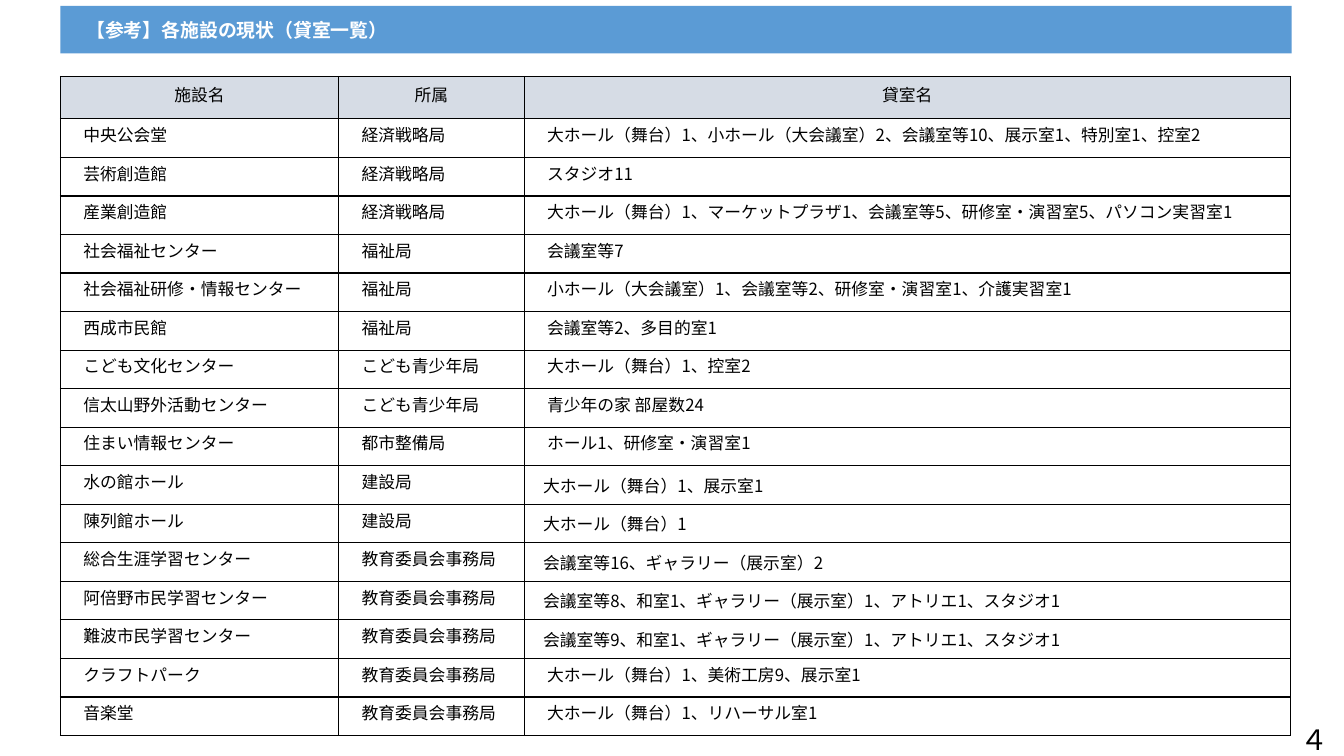
"""Build the slide that lists the rental rooms of each facility."""
from dataclasses import dataclass

from lxml.etree import SubElement
from pptx import Presentation
from pptx.dml.color import RGBColor
from pptx.enum.shapes import MSO_SHAPE
from pptx.enum.text import MSO_ANCHOR, PP_ALIGN
from pptx.oxml.ns import qn
from pptx.util import Inches, Pt

COLORS = {"banner": "5B9BD5", "head": "D6DCE5", "ink": "000000", "white": "FFFFFF"}
FONT = "Noto Sans CJK JP"
PAD = "　"
LEFT, WIDTH = 0.6, 12.21
TOP, HEIGHT, HEAD = 0.76, 6.54, 0.42
COLS = (2.76, 1.84, 7.6)
TITLES = ("施設名", "所属", "貸室名")


@dataclass
class Hall:
    name: str
    office: str
    rooms: str
    tight: bool = False


HALLS = [
    Hall("中央公会堂", "経済戦略局",
         "大ホール（舞台）1、小ホール（大会議室）2、会議室等10、展示室1、特別室1、控室2"),
    Hall("芸術創造館", "経済戦略局", "スタジオ11"),
    Hall("産業創造館", "経済戦略局",
         "大ホール（舞台）1、マーケットプラザ1、会議室等5、研修室・演習室5、パソコン実習室1"),
    Hall("社会福祉センター", "福祉局", "会議室等7"),
    Hall("社会福祉研修・情報センター", "福祉局",
         "小ホール（大会議室）1、会議室等2、研修室・演習室1、介護実習室1"),
    Hall("西成市民館", "福祉局", "会議室等2、多目的室1"),
    Hall("こども文化センター", "こども青少年局", "大ホール（舞台）1、控室2"),
    Hall("信太山野外活動センター", "こども青少年局", "青少年の家 部屋数24"),
    Hall("住まい情報センター", "都市整備局", "ホール1、研修室・演習室1"),
    Hall("水の館ホール", "建設局", "大ホール（舞台）1、展示室1", True),
    Hall("陳列館ホール", "建設局", "大ホール（舞台）1", True),
    Hall("総合生涯学習センター", "教育委員会事務局", "会議室等16、ギャラリー（展示室）2", True),
    Hall("阿倍野市民学習センター", "教育委員会事務局",
         "会議室等8、和室1、ギャラリー（展示室）1、アトリエ1、スタジオ1", True),
    Hall("難波市民学習センター", "教育委員会事務局",
         "会議室等9、和室1、ギャラリー（展示室）1、アトリエ1、スタジオ1", True),
    Hall("クラフトパーク", "教育委員会事務局", "大ホール（舞台）1、美術工房9、展示室1"),
    Hall("音楽堂", "教育委員会事務局", "大ホール（舞台）1、リハーサル室1"),
]


def color(key: str) -> RGBColor:
    return RGBColor.from_string(COLORS[key])


def write(frame, text: str, size: float, ink: str = "ink", font: str = FONT,
          align=PP_ALIGN.LEFT, bold: bool = False) -> None:
    frame.text = text
    para = frame.paragraphs[0]
    para.alignment = align
    run = para.runs[0]
    run.font.name = font
    run.font.size = Pt(size)
    run.font.bold = bold
    run.font.color.rgb = color(ink)
    SubElement(run.font._element, qn("a:ea"), typeface=font)


def border(cell) -> None:
    props = cell._tc.get_or_add_tcPr()
    for side in ("L", "R", "T", "B"):
        line = SubElement(props, qn(f"a:ln{side}"), w=str(Pt(1)))
        fill = SubElement(line, qn("a:solidFill"))
        SubElement(fill, qn("a:srgbClr"), val=COLORS["ink"])


def put(cell, text: str, align, tight: bool = False, head: bool = False) -> None:
    write(cell.text_frame, text, 12, align=align)
    if not tight:
        cell.text_frame.paragraphs[0].line_spacing = Pt(12)
    cell.vertical_anchor = MSO_ANCHOR.MIDDLE
    cell.margin_left = cell.margin_right = Inches(0.02 if tight else 0.06)
    cell.margin_top = cell.margin_bottom = 0
    border(cell)
    if head:
        cell.fill.solid()
        cell.fill.fore_color.rgb = color("head")
    else:
        cell.fill.background()


def banner(slide) -> None:
    bar = slide.shapes.add_shape(MSO_SHAPE.RECTANGLE, Inches(LEFT), Inches(0.06),
                                 Inches(WIDTH), Inches(0.47))
    bar.shadow.inherit = False
    bar.fill.solid()
    bar.fill.fore_color.rgb = color("banner")
    bar.line.fill.background()
    frame = bar.text_frame
    frame.word_wrap = True
    frame.vertical_anchor = MSO_ANCHOR.MIDDLE
    frame.margin_left = frame.margin_right = Inches(0.07)
    frame.margin_top = frame.margin_bottom = Inches(0.04)
    write(frame, PAD + "【参考】各施設の現状（貸室一覧）", 13.5, "white", bold=True)


def grid(slide) -> None:
    table = slide.shapes.add_table(len(HALLS) + 1, len(COLS), Inches(LEFT), Inches(TOP),
                                   Inches(WIDTH), Inches(HEIGHT)).table
    table.first_row = table.horz_banding = False
    for col, width in zip(table.columns, COLS):
        col.width = Inches(width)
    for row in table.rows:
        row.height = Inches((HEIGHT - HEAD) / len(HALLS))
    table.rows[0].height = Inches(HEAD)
    for x, title in enumerate(TITLES):
        put(table.cell(0, x), title, PP_ALIGN.CENTER, head=True)
    for y, hall in enumerate(HALLS, 1):
        put(table.cell(y, 0), PAD + hall.name, PP_ALIGN.JUSTIFY)
        put(table.cell(y, 1), PAD + hall.office, PP_ALIGN.LEFT)
        put(table.cell(y, 2), PAD + hall.rooms, PP_ALIGN.LEFT, hall.tight)


def number(slide) -> None:
    box = slide.shapes.add_textbox(Inches(10.95), Inches(7.13), Inches(2.33), Inches(0.4))
    frame = box.text_frame
    frame.word_wrap = True
    frame.vertical_anchor = MSO_ANCHOR.MIDDLE
    write(frame, "４", 20, font="Calibri", align=PP_ALIGN.RIGHT)


def main() -> None:
    deck = Presentation()
    deck.slide_width, deck.slide_height = Inches(13.33), Inches(7.5)
    slide = deck.slides.add_slide(deck.slide_layouts[6])
    banner(slide)
    grid(slide)
    number(slide)
    deck.save("out.pptx")


if __name__ == "__main__":
    main()
